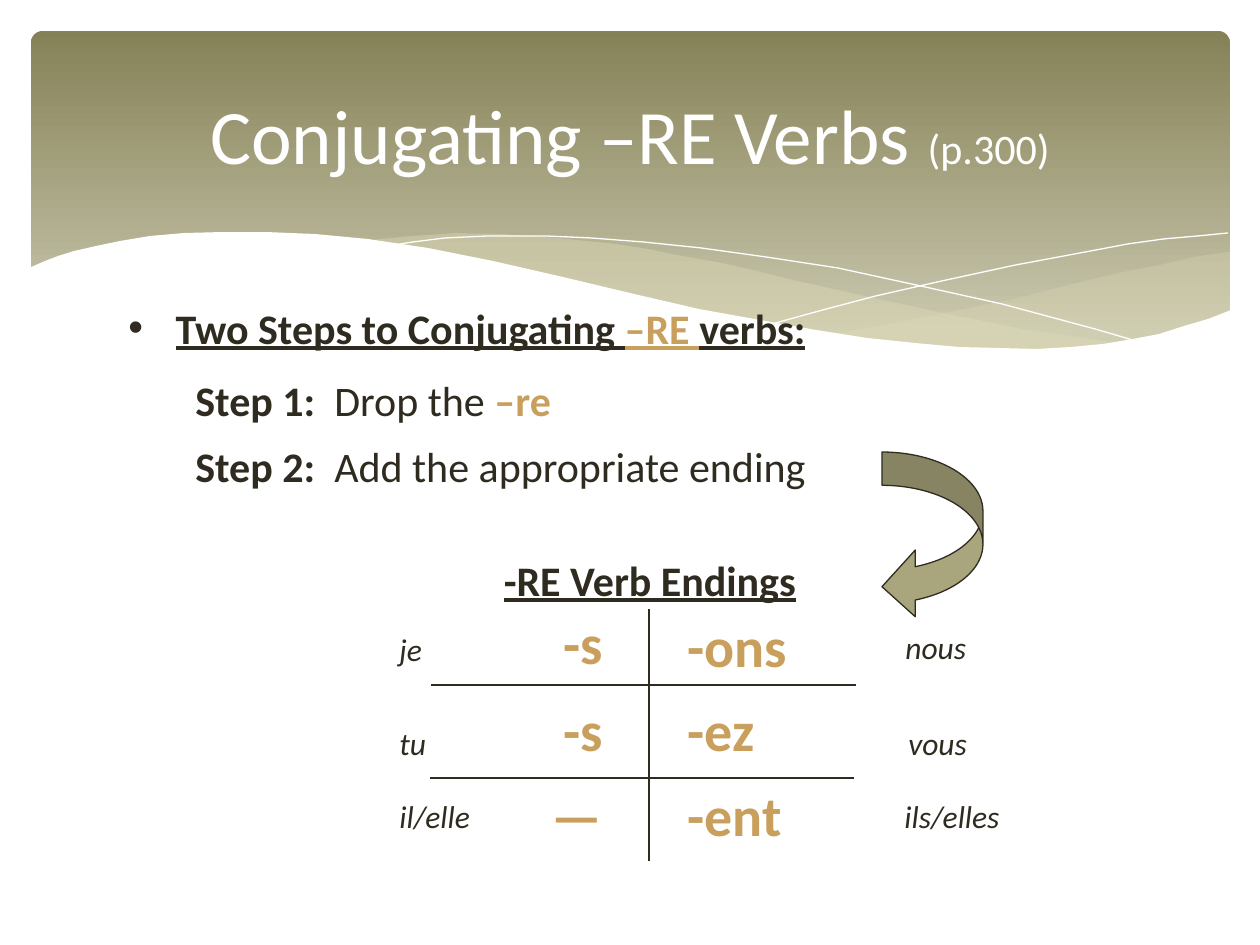
from lxml import etree
from pptx import Presentation
from pptx.dml.color import RGBColor
from pptx.enum.shapes import MSO_CONNECTOR as CONN, MSO_SHAPE as SHP
from pptx.enum.text import MSO_ANCHOR as ANCHOR, MSO_AUTO_SIZE as FIT, PP_ALIGN as AL
from pptx.oxml.ns import qn
from pptx.util import Pt

PX = 914400 / 126
DARK, GOLD, WHITE, CREAM = "2F2B20", "C89F5D", "FFFFFF", "DFDCB7"
rgb = RGBColor.from_string

prs = Presentation()
prs.slide_width, prs.slide_height = round(1260 * PX), round(945 * PX)
s = prs.slides.add_slide(prs.slide_layouts[6])


def text(x, y, w, h, runs, al=AL.LEFT, wrap=True, fit=FIT.SHAPE_TO_FIT_TEXT):
    """Each run is (text, size, colour, style letters from b, i, u)."""
    tf = s.shapes.add_textbox(*(round(v * PX) for v in (x, y, w, h))).text_frame
    tf.word_wrap, tf.auto_size = wrap, fit
    p = tf.paragraphs[0]
    p.alignment = al
    for words, size, color, style in runs:
        r = p.add_run()
        r.text = words
        r.font.name, r.font.size = "Calibri", Pt(size)
        r.font.color.rgb = rgb(color)
        r.font.bold, r.font.italic = "b" in style, "i" in style
        r.font.underline = "u" in style
    return tf


def curve(pts, fill=None, alpha=100):
    """Filled outline, or a white hairline when no fill is given."""
    fb = s.shapes.build_freeform(*pts[0], scale=PX)
    fb.add_line_segments(pts[1:], close=fill is not None)
    sp = fb.convert_to_shape()
    sp.shadow.inherit = False
    if fill is None:
        sp.fill.background()
        sp.line.color.rgb, sp.line.width = rgb(WHITE), 0
        return
    sp.line.fill.background()
    sp.fill.solid()
    sp.fill.fore_color.rgb = rgb(fill)
    if alpha < 100:
        clr = sp.fill._xPr.find(".//" + qn("a:srgbClr"))
        etree.SubElement(clr, qn("a:alpha")).set("val", str(alpha * 1000))


# Banner with gradient
sp = s.shapes.add_shape(SHP.ROUNDED_RECTANGLE, *(round(v * PX) for v in (31, 31, 1199, 340)))
sp.adjustments[0] = 0.034
sp.shadow.inherit = False
sp.line.fill.background()
sp.fill.gradient()
sp.fill.gradient_angle = 270
for stop, color, pos in zip(sp.fill.gradient_stops, ("858157", "CBC9B0"), (0, 0.9)):
    stop.color.rgb, stop.position = rgb(color), pos

# Waves under the banner
curve([(1228, 252), (1194, 257), (1160, 265), (1123, 272), (1085, 281), (1014, 299),
       (949, 312), (890, 324), (833, 334), (871, 339), (906, 343), (939, 346),
       (969, 349), (1012, 350), (1052, 349), (1087, 346), (1120, 343), (1150, 336),
       (1178, 330), (1196, 324), (1230, 311), (1230, 252)], CREAM, 29)
curve([(1125, 344), (1091, 339), (1017, 328), (934, 311), (842, 291), (793, 280),
       (753, 270), (717, 262), (682, 256), (648, 249), (616, 244), (557, 238),
       (503, 234), (455, 233), (413, 236), (360, 241), (407, 247), (456, 256),
       (509, 266), (566, 280), (668, 302), (736, 318), (799, 329), (857, 338),
       (910, 345), (959, 349), (1003, 350), (1056, 350), (1092, 348)], CREAM, 40)
curve([(389, 246), (413, 242), (445, 238), (488, 236), (546, 236), (591, 238),
       (643, 242), (701, 248), (766, 257), (838, 268), (916, 285), (1002, 304),
       (1095, 329), (1143, 343)])
curve([(772, 324), (823, 310), (876, 296), (942, 281), (1016, 265), (1091, 251),
       (1128, 244), (1164, 239), (1198, 236), (1228, 233)])
curve([(1231, 310), (1208, 319), (1184, 326), (1159, 334), (1133, 339), (1103, 344),
       (1071, 347), (1037, 349), (999, 348), (959, 347), (915, 343), (867, 338),
       (816, 330), (760, 320), (699, 309), (634, 294), (563, 277), (493, 261),
       (428, 248), (368, 239), (315, 234), (266, 232), (223, 232), (184, 233),
       (150, 236), (120, 241), (96, 246), (74, 251), (58, 256), (45, 261),
       (29, 268), (29, 415), (1231, 415)], WHITE)

# Title
tf = text(63, 47, 1134, 173, [("Conjugating –RE Verbs ", 44, WHITE, ""),
                              ("(p.300)", 24, WHITE, "")], AL.CENTER, fit=FIT.NONE)
tf.vertical_anchor = ANCHOR.MIDDLE

# Steps
tf = text(116, 296, 1134, 92, [("Two Steps to Conjugating ", 24, DARK, "bu"),
                               ("–RE ", 24, GOLD, "bu"),
                               ("verbs:", 24, DARK, "bu")], fit=FIT.NONE)
pPr = tf.paragraphs[0]._p.get_or_add_pPr()
pPr.set("marL", "342900")
pPr.set("indent", "-342900")
etree.SubElement(pPr, qn("a:buFont")).set("typeface", "Arial")
etree.SubElement(pPr, qn("a:buChar")).set("char", "•")
text(183, 368, 399, 63, [("Step 1:", 24, DARK, "b"), ("  Drop the ", 24, DARK, ""),
                         ("–re", 24, GOLD, "b")], wrap=False)
text(183, 434, 703, 63, [("Step 2:", 24, DARK, "b"),
                         ("  Add the appropriate ending", 24, DARK, "")], wrap=False)

# Grid lines of the endings chart
for ends in ((649, 609, 649, 861), (431, 685, 856, 685), (430, 778, 854, 778)):
    ln = s.shapes.add_connector(CONN.STRAIGHT, *(round(v * PX) for v in ends))
    ln.line.color.rgb, ln.line.width = rgb(DARK), Pt(1.5)
    etree.SubElement(ln._element.spPr, qn("a:effectLst"))

text(441, 548, 418, 63, [("-RE Verb Endings", 24, DARK, "bu")], AL.CENTER)

# Curved arrow from step 2 to the endings
sp = s.shapes.add_shape(SHP.CURVED_LEFT_ARROW, *(round(v * PX) for v in (882, 452, 101, 168)))
for i, adj in enumerate((0.33, 0.66, 0.33)):
    sp.adjustments[i] = adj
sp.shadow.inherit = False
sp.fill.solid()
sp.fill.fore_color.rgb = rgb("A9A57C")
sp.line.color.rgb, sp.line.width = rgb(DARK), Pt(0.75)

# Endings: singular right-aligned, plural left-aligned
for x, w, al, column in ((430, 185, AL.RIGHT, (("-s", 602), ("-s", 689), ("—", 774))),
                         (675, 257, AL.LEFT, (("-ons", 605), ("-ez", 689), ("-ent", 774)))):
    for ending, y in column:
        text(x, y, w, 80, [(ending, 32, GOLD, "b")], al)

# Pronouns
for word, x, y, w in (("je", 387, 624, 49), ("tu", 387, 718, 55), ("il/elle", 387, 791, 107),
                      ("nous", 893, 622, 93), ("vous", 896, 718, 92),
                      ("ils/elles", 892, 791, 135)):
    text(x, y, w, 50, [(word, 18, DARK, "i")], wrap=False)

prs.save("out.pptx")
